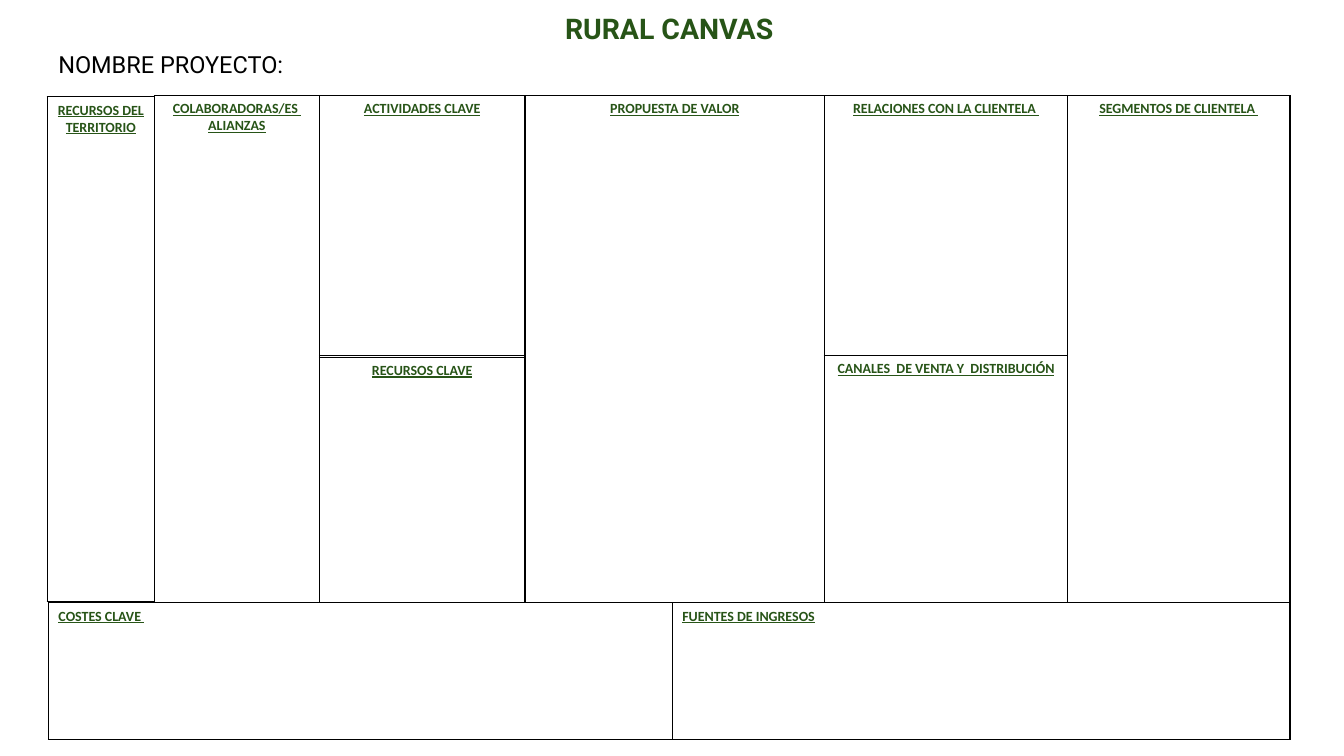
from dataclasses import dataclass

from lxml.etree import SubElement
from pptx import Presentation
from pptx.dml.color import RGBColor
from pptx.enum.text import PP_ALIGN
from pptx.oxml.ns import qn
from pptx.slide import Slide
from pptx.table import _Cell
from pptx.text.text import _Paragraph
from pptx.util import Cm, Pt


@dataclass(frozen=True)
class Theme:
    green: RGBColor = RGBColor(0x27, 0x54, 0x17)
    black: RGBColor = RGBColor(0, 0, 0)
    heading_font: str = "Roboto"
    block_font: str = "Calibri"
    title_size: float = 20.3
    project_size: float = 16.8
    block_size: float = 10
    border_width: float = 1


@dataclass(frozen=True)
class Block:
    """One canvas block, given by its edges in centimetres."""
    title: str
    left: float
    top: float
    right: float
    bottom: float
    align: PP_ALIGN = PP_ALIGN.CENTER


THEME = Theme()

# Edges shared by the blocks, in centimetres
LEFT, PARTNERS, ACTIVITIES, VALUE = 1.22, 3.89, 8.05, 13.23
RELATIONS, SEGMENTS, RIGHT = 20.78, 26.9, 32.51
TOP, UPPER, LOWER, BOTTOM = 2.41, 8.96, 15.19, 18.64
INCOME = 16.94

BLOCKS = [
    Block("SEGMENTOS DE CLIENTELA ", SEGMENTS, TOP, RIGHT, LOWER),
    Block("RELACIONES CON LA CLIENTELA ", RELATIONS, TOP, SEGMENTS, UPPER),
    Block("CANALES  DE VENTA Y  DISTRIBUCIÓN", RELATIONS, UPPER, SEGMENTS, LOWER),
    Block("FUENTES DE INGRESOS", INCOME, LOWER, RIGHT, BOTTOM, PP_ALIGN.LEFT),
    Block("COSTES CLAVE ", LEFT, LOWER, INCOME, BOTTOM, PP_ALIGN.LEFT),
    Block("PROPUESTA DE VALOR", VALUE, TOP, RELATIONS, LOWER),
    Block("ACTIVIDADES CLAVE", ACTIVITIES, TOP, VALUE, UPPER),
    Block("RECURSOS CLAVE", ACTIVITIES, UPPER + 0.04, VALUE, LOWER),
    Block("COLABORADORAS/ES  ALIANZAS", PARTNERS, TOP, ACTIVITIES, LOWER),
    Block("RECURSOS DEL TERRITORIO", LEFT - 0.03, TOP + 0.03, PARTNERS, LOWER - 0.04),
]


def add_run(paragraph: _Paragraph, text: str, font: str, size: float,
            color: RGBColor, bold: bool = False, underline: bool = False) -> None:
    run = paragraph.add_run()
    run.text = text
    run.font.name = font
    run.font.size = Pt(size)
    run.font.color.rgb = color
    run.font.bold = bold
    run.font.underline = underline


def set_borders(cell: _Cell) -> None:
    properties = cell._tc.get_or_add_tcPr()
    for position, side in enumerate(("lnL", "lnR", "lnT", "lnB")):
        line = properties.makeelement(qn(f"a:{side}"), {"w": str(Pt(THEME.border_width))})
        properties.insert(position, line)
        fill = SubElement(line, qn("a:solidFill"))
        SubElement(fill, qn("a:srgbClr"), val=str(THEME.black))


def add_block(slide: Slide, block: Block) -> None:
    width, height = Cm(block.right - block.left), Cm(block.bottom - block.top)
    table = slide.shapes.add_table(1, 1, Cm(block.left), Cm(block.top), width, height).table
    table.first_row = False
    table.horz_banding = False
    cell = table.cell(0, 0)
    cell.fill.background()
    set_borders(cell)
    paragraph = cell.text_frame.paragraphs[0]
    paragraph.alignment = block.align
    add_run(paragraph, block.title, THEME.block_font, THEME.block_size,
            THEME.green, bold=True, underline=True)


def add_heading(slide: Slide) -> None:
    box = slide.shapes.add_textbox(Cm(LEFT), Cm(0.38), Cm(RIGHT - LEFT), Cm(1.8))
    frame = box.text_frame
    frame.word_wrap = True
    title, project = frame.paragraphs[0], frame.add_paragraph()
    for paragraph in (title, project):
        paragraph.line_spacing = 0.7
        paragraph.space_before = Pt(10)
    title.alignment = PP_ALIGN.CENTER
    add_run(title, "RURAL CANVAS", THEME.heading_font, THEME.title_size, THEME.green, bold=True)
    add_run(project, "NOMBRE PROYECTO:", THEME.heading_font, THEME.project_size, THEME.black)


def main() -> None:
    presentation = Presentation()
    presentation.slide_width, presentation.slide_height = Cm(33.87), Cm(19.05)
    slide = presentation.slides.add_slide(presentation.slide_layouts[6])

    # Title and project name
    add_heading(slide)

    # Canvas blocks
    for block in BLOCKS:
        add_block(slide, block)

    presentation.save("out.pptx")


if __name__ == "__main__":
    main()
